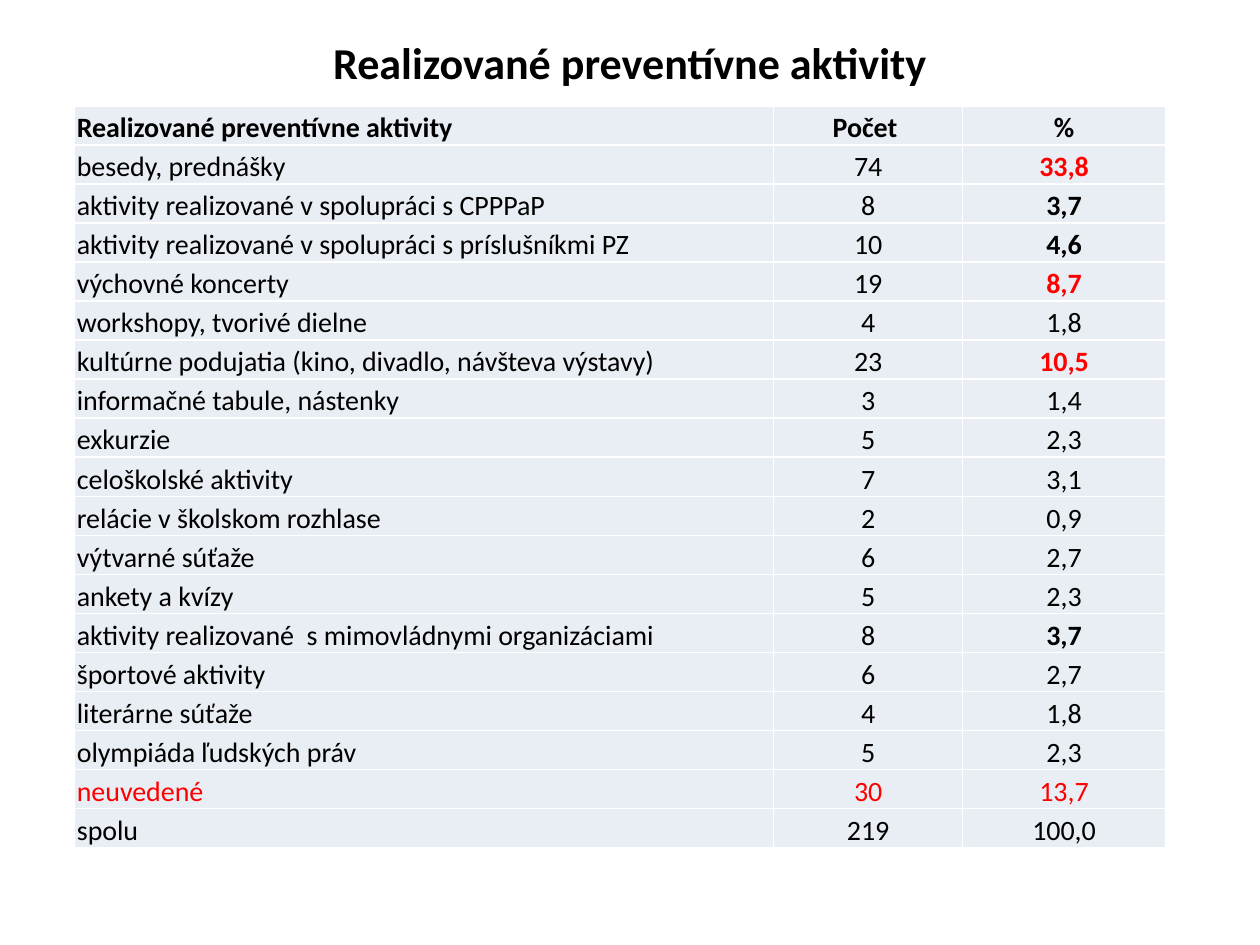
"""Build the slide with the table of prevention activities."""
from dataclasses import dataclass

from lxml import etree
from pptx import Presentation
from pptx import util as u
from pptx.dml import color
from pptx.enum import text
from pptx.oxml import ns

FONT = "Calibri"
BLACK, RED, WHITE, PALE = "000000", "FF0000", "FFFFFF", "E9EDF4"
COLUMN_WIDTHS = (5.55, 1.5, 1.61)
ROW_HEIGHT = 0.31


@dataclass
class Activity:
    name: str
    count: str
    percent: str
    color: str = BLACK
    bold: bool = False
    percent_color: str = ""
    percent_bold: bool = False


ACTIVITIES = [
    Activity("Realizované preventívne aktivity", "Počet ", "%", bold=True),
    Activity("besedy, prednášky", "74", "33,8", percent_color=RED, percent_bold=True),
    Activity("aktivity realizované v spolupráci s CPPPaP", "8", "3,7", percent_bold=True),
    Activity("aktivity realizované v spolupráci s príslušníkmi PZ", "10", "4,6", percent_bold=True),
    Activity("výchovné koncerty", "19", "8,7", percent_color=RED, percent_bold=True),
    Activity("workshopy, tvorivé dielne", "4", "1,8"),
    Activity("kultúrne podujatia (kino, divadlo, návšteva výstavy)", "23", "10,5",
             percent_color=RED, percent_bold=True),
    Activity("informačné tabule, nástenky", "3", "1,4"),
    Activity("exkurzie", "5", "2,3"),
    Activity("celoškolské aktivity", "7", "3,1"),
    Activity("relácie v školskom rozhlase", "2", "0,9"),
    Activity("výtvarné súťaže", "6", "2,7"),
    Activity("ankety a kvízy", "5", "2,3"),
    Activity("aktivity realizované  s mimovládnymi organizáciami", "8", "3,7", percent_bold=True),
    Activity("športové aktivity", "6", "2,7"),
    Activity("literárne súťaže", "4", "1,8"),
    Activity("olympiáda ľudských práv", "5", "2,3"),
    Activity("neuvedené ", "30", "13,7", color=RED),
    Activity("spolu", "219", "100,0"),
]


def rgb(value: str) -> color.RGBColor:
    return color.RGBColor.from_string(value)


def write(tf, content: str, *, size: float = 16, hex_color: str = BLACK, bold: bool = False,
          align=text.PP_ALIGN.CENTER, spacing: float = 1.0) -> None:
    p = tf.paragraphs[0]
    p.alignment = align
    p.line_spacing = spacing
    r = p.add_run()
    r.text = content
    r.font.name = FONT
    r.font.size = u.Pt(size)
    r.font.bold = bold
    r.font.color.rgb = rgb(hex_color)


def add_borders(cell, hex_color: str, width: float) -> None:
    properties = cell._tc.get_or_add_tcPr()
    for index, side in enumerate(("lnL", "lnR", "lnT", "lnB")):
        line = etree.Element(ns.qn(f"a:{side}"), w=str(u.Pt(width)))
        fill = etree.SubElement(line, ns.qn("a:solidFill"))
        etree.SubElement(fill, ns.qn("a:srgbClr"), val=hex_color)
        properties.insert(index, line)


def fill_cell(cell, content: str, **style) -> None:
    cell.margin_left = cell.margin_right = u.Inches(0.02)
    cell.margin_top = cell.margin_bottom = 0
    cell.fill.solid()
    cell.fill.fore_color.rgb = rgb(PALE)
    add_borders(cell, WHITE, 1)
    write(cell.text_frame, content, spacing=1.15, **style)


def add_title(s, content: str) -> None:
    sp = s.shapes.add_textbox(u.Inches(0.5), u.Inches(0.3), u.Inches(9), u.Inches(0.38))
    tf = sp.text_frame
    tf.word_wrap = True
    tf.vertical_anchor = text.MSO_ANCHOR.MIDDLE
    write(tf, content, size=25.2, bold=True)


def add_activity_table(s, activities: list[Activity]) -> None:
    frame = s.shapes.add_table(
        len(activities), len(COLUMN_WIDTHS), u.Inches(0.59), u.Inches(0.84),
        u.Inches(sum(COLUMN_WIDTHS)), u.Inches(ROW_HEIGHT * len(activities)))
    table = frame.table
    for column, width in zip(table.columns, COLUMN_WIDTHS):
        column.width = u.Inches(width)
    for row, activity in zip(table.rows, activities):
        row.height = u.Inches(ROW_HEIGHT)
        name, count, percent = row.cells
        fill_cell(name, activity.name, hex_color=activity.color, bold=activity.bold,
                  align=text.PP_ALIGN.JUSTIFY)
        fill_cell(count, activity.count, hex_color=activity.color, bold=activity.bold)
        fill_cell(percent, activity.percent,
                  hex_color=activity.percent_color or activity.color,
                  bold=activity.bold or activity.percent_bold)


def main() -> None:
    prs = Presentation()
    prs.slide_width, prs.slide_height = u.Inches(10), u.Inches(7.5)
    s = prs.slides.add_slide(prs.slide_layouts[6])
    add_title(s, "Realizované preventívne aktivity")
    add_activity_table(s, ACTIVITIES)
    prs.save("out.pptx")


if __name__ == "__main__":
    main()
